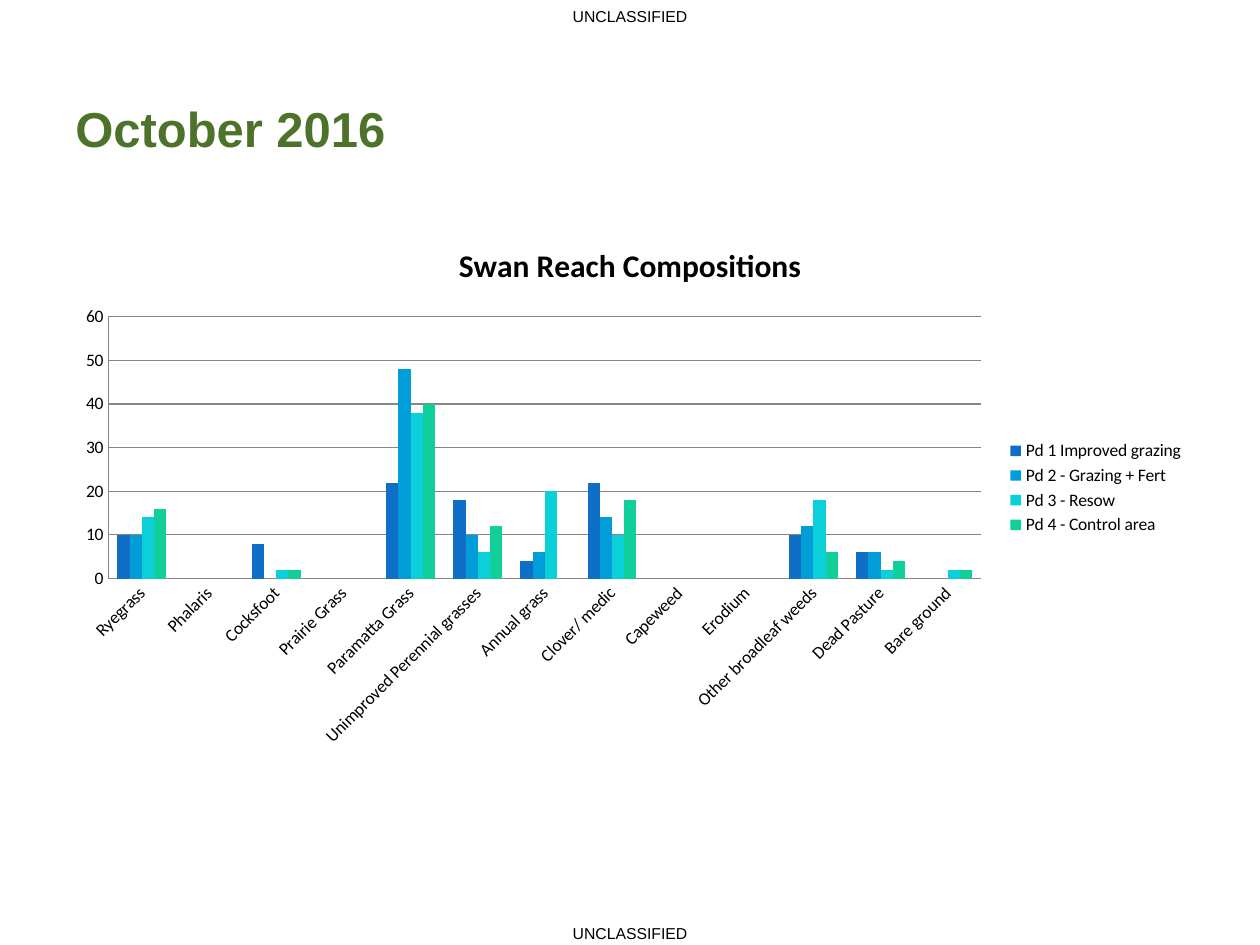
"""Build the October 2016 pasture composition slide."""
import pptx
import pptx.chart.data
import pptx.dml.color
import pptx.enum.chart
import pptx.enum.text
import pptx.oxml
import pptx.oxml.ns
import pptx.util
from pptx.dml.color import RGBColor
from pptx.util import Cm

BLACK = RGBColor(0x00, 0x00, 0x00)
GREEN = RGBColor(0x4C, 0x73, 0x29)
GRAY = RGBColor(0x86, 0x86, 0x86)
BLUE = RGBColor(0x0F, 0x6F, 0xC6)
SKY = RGBColor(0x00, 0x9D, 0xD9)
CYAN = RGBColor(0x0B, 0xD0, 0xD9)
MINT = RGBColor(0x10, 0xCF, 0x9B)

MARKING = "UNCLASSIFIED"
HEADING = "October 2016"
CHART_TITLE = "Swan Reach Compositions"
PLANTS = [
    "Ryegrass", "Phalaris", "Cocksfoot", "Prairie Grass", "Paramatta Grass",
    "Unimproved Perennial grasses", "Annual grass", "Clover/ medic", "Capeweed",
    "Erodium", "Other broadleaf weeds", "Dead Pasture", "Bare ground",
]
PADDOCKS = [
    ("Pd 1 Improved grazing", BLUE,
     [10, None, 8, None, 22, 18, 4, 22, None, None, 10, 6, None]),
    ("Pd 2 - Grazing + Fert", SKY,
     [10, None, None, None, 48, 10, 6, 14, None, None, 12, 6, None]),
    ("Pd 3 - Resow", CYAN,
     [14, None, 2, None, 38, 6, 20, 10, None, None, 18, 2, 2]),
    ("Pd 4 - Control area", MINT,
     [16, None, 2, None, 40, 12, None, 18, None, None, 6, 4, 2]),
]
PLOT_LAYOUT = {"x": 0.04, "y": 0.18, "w": 0.77, "h": 0.49}

SLIDE_WIDTH, SLIDE_HEIGHT = Cm(25.4), Cm(19.05)
MARGIN = Cm(1.27)
CONTENT_WIDTH = SLIDE_WIDTH - 2 * MARGIN
MARKING_HEIGHT = Cm(0.64)
MARKING_TOPS = [Cm(0), Cm(18.49)]


def add_text(page, text, left, top, width, height, *, size, color,
             bold=False, align=pptx.enum.text.PP_ALIGN.LEFT):
    box = page.shapes.add_textbox(left, top, width, height)
    frame = box.text_frame
    frame.word_wrap = True
    frame.vertical_anchor = pptx.enum.text.MSO_ANCHOR.MIDDLE
    para = frame.paragraphs[0]
    para.alignment = align
    span = para.add_run()
    span.text = text
    span.font.name = "Arial"
    span.font.size = pptx.util.Pt(size)
    span.font.bold = bold
    span.font.color.rgb = color


def set_plot_layout(chart):
    plot_area = chart._chartSpace.chart.plotArea
    for old in plot_area.findall(pptx.oxml.ns.qn("c:layout")):
        plot_area.remove(old)
    sizes = "".join(f'<c:{key} val="{value}"/>' for key, value in PLOT_LAYOUT.items())
    plot_area.insert(0, pptx.oxml.parse_xml(
        f'<c:layout {pptx.oxml.ns.nsdecls("c")}><c:manualLayout>'
        '<c:layoutTarget val="inner"/><c:xMode val="edge"/><c:yMode val="edge"/>'
        f'{sizes}</c:manualLayout></c:layout>'))


def add_composition_chart(page):
    data = pptx.chart.data.CategoryChartData()
    data.categories = PLANTS
    for name, _, values in PADDOCKS:
        data.add_series(name, values)
    chart = page.shapes.add_chart(
        pptx.enum.chart.XL_CHART_TYPE.COLUMN_CLUSTERED,
        MARGIN, Cm(4.45), CONTENT_WIDTH, Cm(10.77), data).chart
    chart.font.name = "Calibri"
    chart.font.size = pptx.util.Pt(10)
    chart.font.color.rgb = BLACK

    chart.has_title = True
    title = chart.chart_title.text_frame
    title.text = CHART_TITLE
    font = title.paragraphs[0].runs[0].font
    font.name = "Calibri"
    font.size = pptx.util.Pt(18)
    font.bold = True
    font.color.rgb = BLACK
    chart.chart_title.include_in_layout = False

    chart.has_legend = True
    chart.legend.position = pptx.enum.chart.XL_LEGEND_POSITION.RIGHT
    chart.legend.include_in_layout = False

    plot = chart.plots[0]
    plot.gap_width = 150
    plot.overlap = 0
    plot.vary_by_categories = False
    for series, (_, color, _) in zip(plot.series, PADDOCKS):
        series.format.fill.solid()
        series.format.fill.fore_color.rgb = color

    value_axis, category_axis = chart.value_axis, chart.category_axis
    value_axis.minimum_scale, value_axis.maximum_scale = 0, 60
    value_axis.major_unit = 10
    value_axis.has_major_gridlines = True
    for axis in (value_axis, category_axis):
        axis.major_tick_mark = pptx.enum.chart.XL_TICK_MARK.NONE
        axis.minor_tick_mark = pptx.enum.chart.XL_TICK_MARK.NONE
    for part in (value_axis, category_axis, value_axis.major_gridlines):
        part.format.line.color.rgb = GRAY
        part.format.line.width = pptx.util.Pt(0.75)
    category_axis.tick_labels.font.size = pptx.util.Pt(10)
    category_axis._element.txPr.bodyPr.set("rot", "-2700000")
    set_plot_layout(chart)


def main():
    deck = pptx.Presentation()
    deck.slide_width, deck.slide_height = SLIDE_WIDTH, SLIDE_HEIGHT
    page = deck.slides.add_slide(deck.slide_layouts[6])
    for top in MARKING_TOPS:
        add_text(page, MARKING, 0, top, SLIDE_WIDTH, MARKING_HEIGHT, size=9,
                 color=BLACK, align=pptx.enum.text.PP_ALIGN.CENTER)
    add_text(page, HEADING, MARGIN, Cm(1.22), CONTENT_WIDTH, Cm(2.72),
             size=28, color=GREEN, bold=True)
    add_composition_chart(page)
    deck.save("out.pptx")


if __name__ == "__main__":
    main()
